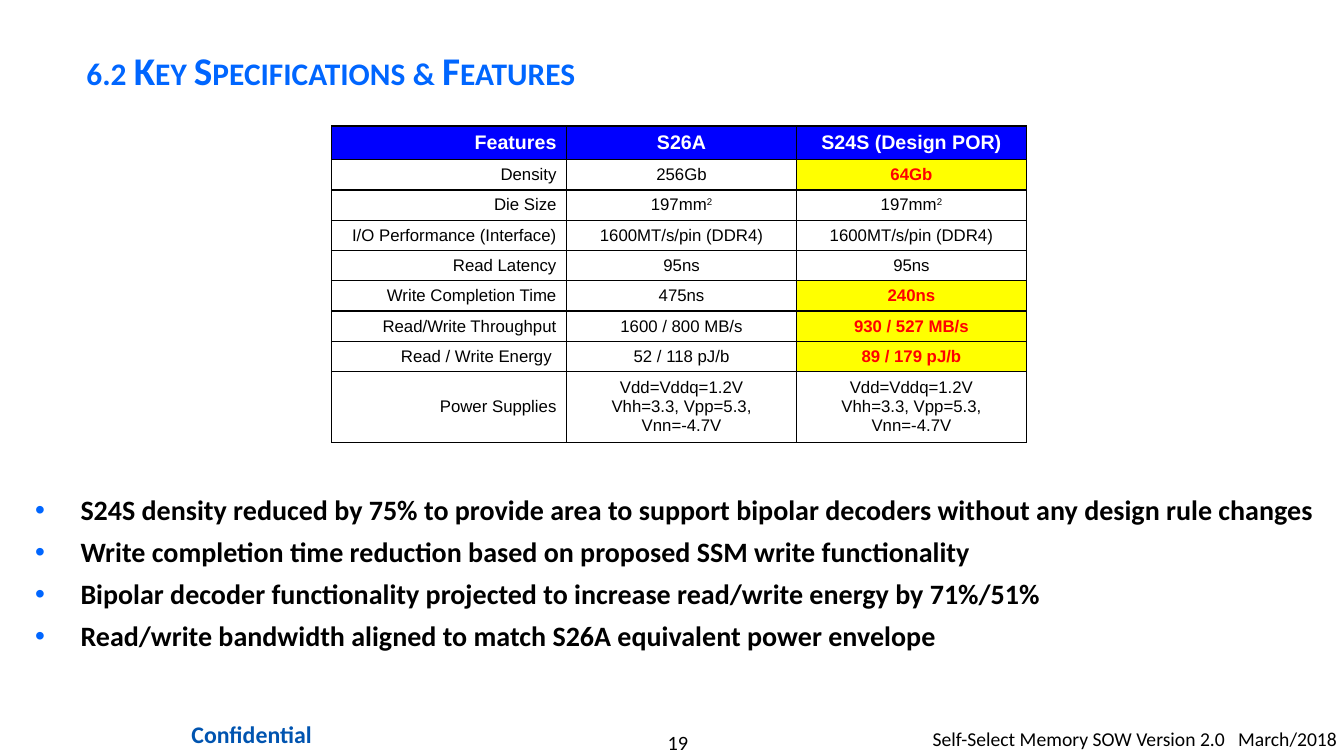
from pptx import Presentation
from pptx.dml.color import RGBColor
from pptx.enum.text import MSO_ANCHOR, PP_ALIGN
from pptx.oxml import parse_xml
from pptx.oxml.ns import nsdecls
from pptx.util import Inches, Pt

LEFT, CENTER, RIGHT = PP_ALIGN.LEFT, PP_ALIGN.CENTER, PP_ALIGN.RIGHT
TOP, MIDDLE = MSO_ANCHOR.TOP, MSO_ANCHOR.MIDDLE
BLACK, WHITE, RED, YELLOW = "000000", "FFFFFF", "FF0000", "FFFF00"
ACCENT, HEADER_BLUE, CONFIDENTIAL_BLUE = "0066FF", "0000FF", "0054B0"

COLUMN_WIDTHS = [2.33, 2.28, 2.28]
HEADER_HEIGHT, ROW_HEIGHT, LAST_ROW_HEIGHT = 0.32, 0.28, 0.65
SUPPLIES = "Vdd=Vddq=1.2V\nVhh=3.3, Vpp=5.3, Vnn=-4.7V"
# In a cell, "^" starts a superscript and "\n" a new paragraph.
SPECIFICATIONS = [
    ("Features", "S26A", "S24S (Design POR)"),
    ("Density", "256Gb", "64Gb"),
    ("Die Size", "197mm^2", "197mm^2"),
    ("I/O Performance (Interface)", "1600MT/s/pin (DDR4)", "1600MT/s/pin (DDR4)"),
    ("Read Latency", "95ns", "95ns"),
    ("Write Completion Time", "475ns", "240ns"),
    ("Read/Write Throughput", "1600 / 800 MB/s", "930 / 527 MB/s"),
    ("Read / Write Energy ", "52 / 118 pJ/b", "89 / 179 pJ/b"),
    ("Power Supplies", SUPPLIES, SUPPLIES),
]
FINDINGS = [
    "S24S density reduced by 75% to provide area to support bipolar decoders "
    "without any design rule changes",
    "Write completion time reduction based on proposed SSM write functionality",
    "Bipolar decoder functionality projected to increase read/write energy by 71%/51%",
    "Read/write bandwidth aligned to match S26A equivalent power envelope",
]


def rgb(value):
    return RGBColor.from_string(value)


def add_run(p, text, size, color, bold=False, font="Calibri"):
    r = p.add_run()
    r.text = text
    r.font.name = font
    r.font.size = Pt(size)
    r.font.bold = bold
    r.font.color.rgb = rgb(color)
    return r


def add_text_frame(s, box, inset_x=0.1, inset_y=0.05, anchor=TOP):
    tf = s.shapes.add_textbox(*map(Inches, box)).text_frame
    tf.word_wrap = True
    tf.vertical_anchor = anchor
    tf.margin_left = tf.margin_right = Inches(inset_x)
    tf.margin_top = tf.margin_bottom = Inches(inset_y)
    return tf


def add_title(s, box, text):
    p = add_text_frame(s, box, anchor=MIDDLE).paragraphs[0]
    p.line_spacing = 1.1
    r = add_run(p, text, 28, ACCENT, bold=True)
    r.font._element.set("cap", "small")


def add_cell_borders(cell):
    tc_pr = cell._tc.get_or_add_tcPr()
    for side in "LRTB":
        tc_pr.append(parse_xml(
            f'<a:ln{side} {nsdecls("a")} w="12700"><a:solidFill>'
            f'<a:srgbClr val="{BLACK}"/></a:solidFill></a:ln{side}>'))


def fill_cell(cell, text, align, size, color, bold, fill):
    add_cell_borders(cell)
    cell.fill.solid()
    cell.fill.fore_color.rgb = rgb(fill)
    cell.vertical_anchor = MIDDLE
    tf = cell.text_frame
    for i, line in enumerate(text.split("\n")):
        p = tf.add_paragraph() if i else tf.paragraphs[0]
        p.alignment = align
        base, _, superscript = line.partition("^")
        add_run(p, base, size, color, bold, "Arial")
        if superscript:
            r = add_run(p, superscript, size, color, bold, "Arial")
            r.font._element.set("baseline", "30000")


def add_specifications(s, left, top):
    """Table whose highlighted cells are the design values that were changed."""
    changed = {"Density", "Write Completion Time", "Read/Write Throughput",
               "Read / Write Energy "}
    heights = [HEADER_HEIGHT] + [ROW_HEIGHT] * (len(SPECIFICATIONS) - 2) + [LAST_ROW_HEIGHT]
    table = s.shapes.add_table(
        len(heights), len(COLUMN_WIDTHS), Inches(left), Inches(top),
        Inches(sum(COLUMN_WIDTHS)), Inches(sum(heights))).table
    table.first_row = table.horz_banding = False
    for column, width in zip(table.columns, COLUMN_WIDTHS):
        column.width = Inches(width)
    for i, (values, height) in enumerate(zip(SPECIFICATIONS, heights)):
        table.rows[i].height = Inches(height)
        for j, text in enumerate(values):
            if i == 0:
                style = 14, WHITE, True, HEADER_BLUE
            elif j == 2 and values[0] in changed:
                style = 12, RED, True, YELLOW
            else:
                style = 12, BLACK, False, WHITE
            fill_cell(table.cell(i, j), text, CENTER if j else RIGHT, *style)


def add_bullet(p, indent):
    p_pr = p._p.get_or_add_pPr()
    p_pr.set("marL", str(Inches(indent)))
    p_pr.set("indent", str(-Inches(indent)))
    for xml in (f'<a:buClr {nsdecls("a")}><a:srgbClr val="{ACCENT}"/></a:buClr>',
                f'<a:buFont {nsdecls("a")} typeface="Arial"/>',
                f'<a:buChar {nsdecls("a")} char="•"/>'):
        p_pr.append(parse_xml(xml))


def add_findings(s, box):
    tf = add_text_frame(s, box)
    for i, text in enumerate(FINDINGS):
        p = tf.add_paragraph() if i else tf.paragraphs[0]
        add_bullet(p, 0.45)
        if i:
            p.space_before = Pt(6)
        add_run(p, text, 20, BLACK, bold=True)


def add_footer(s):
    parts = [
        ((5.56, 7.24, 2.33, 0.24), 0, 0, CENTER, "19", 14.5, BLACK, False),
        ((1.55, 7.08, 1.89, 0.41), 0.12, 0.06, CENTER, "Confidential", 17,
         CONFIDENTIAL_BLUE, True),
        ((9.25, 7.16, 4.08, 0.34), 0, 0.05, LEFT,
         "Self-Select Memory SOW Version 2.0   March/2018", 14, BLACK, False),
    ]
    for box, inset_x, inset_y, align, text, size, color, bold in parts:
        p = add_text_frame(s, box, inset_x, inset_y).paragraphs[0]
        p.alignment = align
        add_run(p, text, size, color, bold)


def main():
    prs = Presentation()
    prs.slide_width, prs.slide_height = Inches(13.33), Inches(7.5)
    s = prs.slides.add_slide(prs.slide_layouts[6])
    add_footer(s)
    add_title(s, (0.76, 0.21, 11.06, 0.92), "6.2 Key Specifications & Features")
    add_findings(s, (0.25, 4.84, 12.95, 1.83))
    add_specifications(s, 3.29, 1.25)
    prs.save("out.pptx")


if __name__ == "__main__":
    main()
